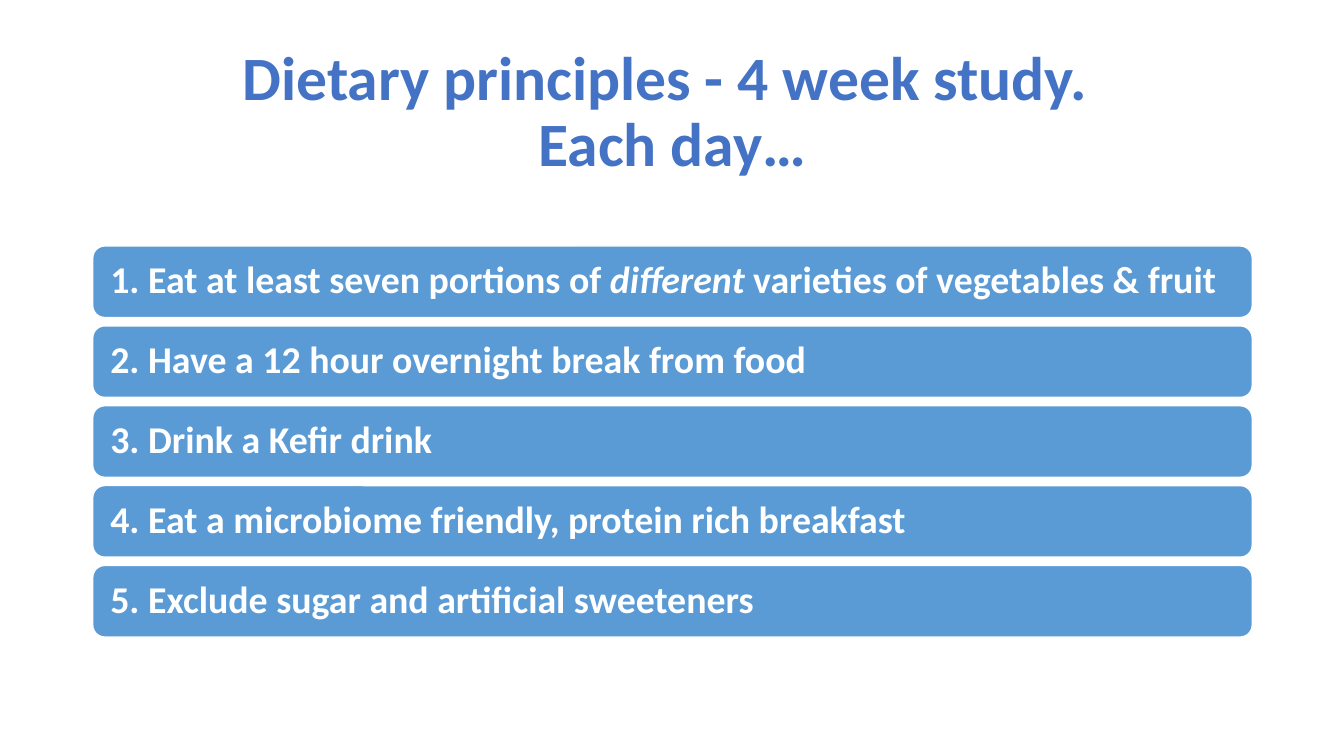
"""Build the dietary principles slide: a title above five numbered bars."""
from pptx import Presentation, util as u
from pptx.dml.color import RGBColor
from pptx.enum import shapes, text

TITLE = "Dietary principles - 4 week study. \vEach day…"
PRINCIPLES = [
    [("Eat at least seven portions of ", False), ("different", True),
     (" varieties of vegetables & fruit", False)],
    [("Have a 12 hour overnight break from food", False)],
    [("Drink a Kefir drink", False)],
    [("Eat a microbiome friendly, protein rich breakfast", False)],
    [("Exclude sugar and artificial sweeteners", False)],
]
SLIDE_W, SLIDE_H = 13.33, 7.5
LEFT, WIDTH = 0.92, 11.5
TITLE_TOP, TITLE_H = 0.4, 1.45
BARS_TOP, BARS_BOTTOM, BAR_H = 2.44, 6.32, 0.71
INSET = 0.14


def rgb(value):
    """Turn a hex string into a colour."""
    return RGBColor.from_string(value)


def style(p, size, color, align):
    """Format a whole paragraph."""
    p.alignment = align
    p.line_spacing = 0.9
    p.font.name = "Calibri"
    p.font.size = u.Pt(size)
    p.font.bold = True
    p.font.color.rgb = rgb(color)


def add_bar(s, top, number, runs):
    """Add one numbered principle in a rounded bar."""
    sp = s.shapes.add_shape(shapes.MSO_SHAPE.ROUNDED_RECTANGLE, u.Inches(LEFT),
                            u.Inches(top), u.Inches(WIDTH), u.Inches(BAR_H))
    sp.shadow.inherit = False
    sp.fill.solid()
    sp.fill.fore_color.rgb = rgb("5B9BD5")
    sp.line.color.rgb = rgb("FFFFFF")
    sp.line.width = u.Pt(1)
    tf = sp.text_frame
    tf.word_wrap = True
    tf.vertical_anchor = text.MSO_ANCHOR.MIDDLE
    tf.margin_left = tf.margin_right = u.Inches(INSET)
    tf.margin_top = tf.margin_bottom = u.Inches(INSET)
    p = tf.paragraphs[0]
    style(p, 27, "FFFFFF", text.PP_ALIGN.LEFT)
    for i, (words, italic) in enumerate(runs):
        r = p.add_run()
        r.text = words if i else f"{number}. {words}"
        if italic:
            r.font.italic = True


def main():
    """Lay out the slide and save it."""
    prs = Presentation()
    prs.slide_width, prs.slide_height = u.Inches(SLIDE_W), u.Inches(SLIDE_H)
    s = prs.slides.add_slide(prs.slide_layouts[5])
    title = s.shapes.title
    title.left, title.top = u.Inches(LEFT), u.Inches(TITLE_TOP)
    title.width, title.height = u.Inches(WIDTH), u.Inches(TITLE_H)
    tf = title.text_frame
    tf.word_wrap = True
    tf.auto_size = text.MSO_AUTO_SIZE.NONE
    tf.vertical_anchor = text.MSO_ANCHOR.MIDDLE
    p = tf.paragraphs[0]
    p.text = TITLE
    style(p, 44, "4472C4", text.PP_ALIGN.CENTER)

    step = (BARS_BOTTOM - BARS_TOP - BAR_H) / (len(PRINCIPLES) - 1)
    for i, runs in enumerate(PRINCIPLES):
        add_bar(s, BARS_TOP + i * step, i + 1, runs)
    prs.save("out.pptx")


if __name__ == "__main__":
    main()
